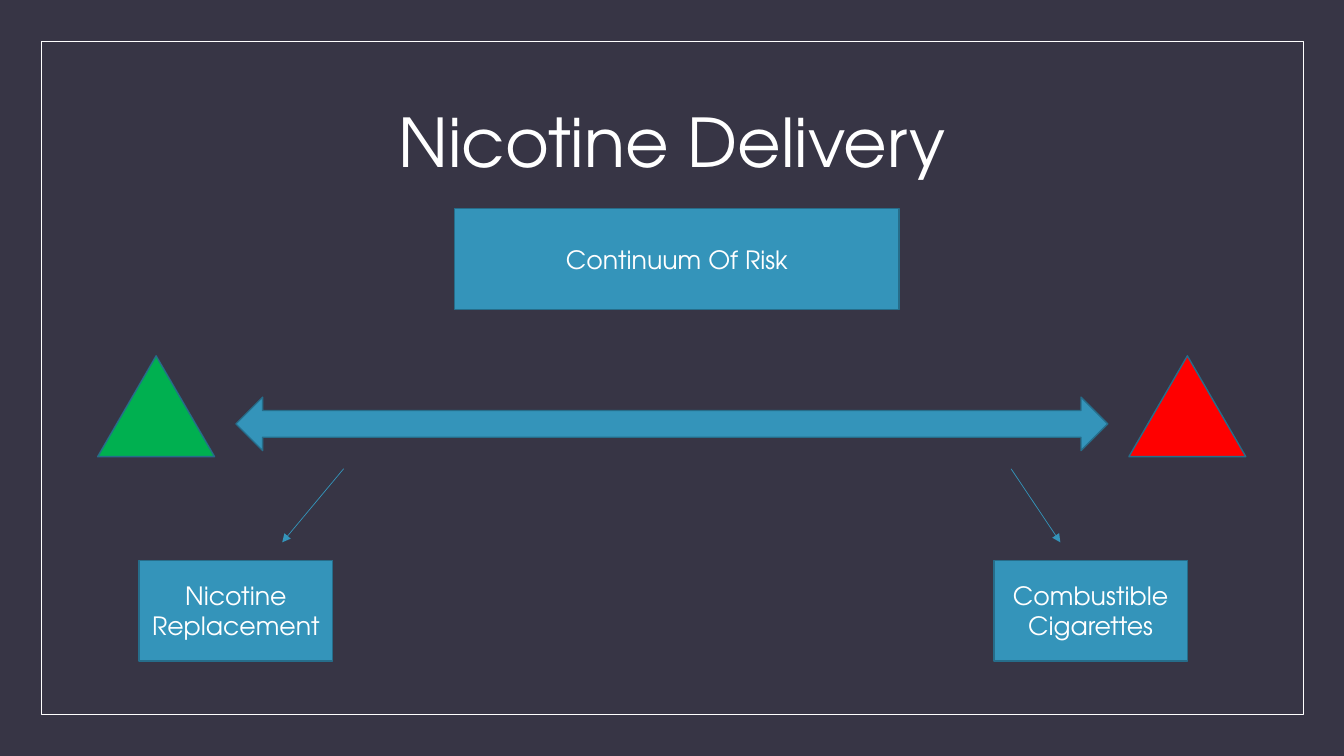
from lxml import etree
from pptx import Presentation
from pptx.dml.color import RGBColor
from pptx.enum import shapes, text
from pptx.oxml.ns import qn
from pptx.util import Pt

FONT = "TeX Gyre Adventor"
BACK, WHITE, BLUE, EDGE = "373545", "FFFFFF", "3494BA", "266D8A"
GREEN, RED = "00B050", "FF0000"

# Lengths in points: left, top, width, height
TITLE = ("Nicotine Delivery", (84.2, 50.4, 792, 108))
FRAME = (29.5, 29.5, 901.5, 481)
RISK_ARROW = (168.5, 283.7, 622.8, 38.2)

ROW_H = 72
TRIANGLE_TOP, TRIANGLE_W = 254.2, 83.5
TRIANGLES = [(69.8, GREEN), (806.4, RED)]
POINTER_TOP, POINTER_END = 334.8, 387.4
POINTERS = [(245.5, 201.6), (722.2, 757.4)]
BOXES = [
    ("Nicotine Replacement", 99.4, 400.3, 138.2),
    ("Combustible Cigarettes", 709.9, 400.3, 138.2),
    ("Continuum Of Risk", 324.7, 149, 317.5),
]


def rgb(value):
    return RGBColor.from_string(value)


def write(sp, words, size=18, color=WHITE, spacing=1.0):
    tf = sp.text_frame
    tf.word_wrap = True
    tf.auto_size = text.MSO_AUTO_SIZE.NONE
    tf.vertical_anchor = text.MSO_ANCHOR.MIDDLE
    p = tf.paragraphs[0]
    p.alignment = text.PP_ALIGN.CENTER
    p.line_spacing = spacing
    r = p.add_run()
    r.text = words
    r.font.name, r.font.size = FONT, Pt(size)
    r.font.color.rgb = rgb(color)


def add_shape(s, kind, box, fill=BLUE, line=EDGE, width=1):
    sp = s.shapes.add_shape(kind, *map(Pt, box))
    sp.shadow.inherit = False
    if fill:
        sp.fill.solid()
        sp.fill.fore_color.rgb = rgb(fill)
    else:
        sp.fill.background()
    sp.line.color.rgb = rgb(line)
    sp.line.width = Pt(width)
    return sp


def add_pointer(s, x1, y1, x2, y2):
    """Draw a thin line with an arrowhead at its second point."""
    line = s.shapes.add_connector(
        shapes.MSO_CONNECTOR.STRAIGHT, *map(Pt, (x1, y1, x2, y2)))
    line.line.color.rgb = rgb(BLUE)
    line.line.width = Pt(0.5)
    etree.SubElement(line.line._get_or_add_ln(), qn("a:tailEnd"), type="triangle")
    etree.SubElement(line._element.spPr, qn("a:effectLst"))


def main():
    prs = Presentation()
    prs.slide_width, prs.slide_height = Pt(960), Pt(540)
    s = prs.slides.add_slide(prs.slide_layouts[5])
    s.background.fill.solid()
    s.background.fill.fore_color.rgb = rgb(BACK)

    words, box = TITLE
    title = s.shapes.title
    title.left, title.top, title.width, title.height = map(Pt, box)
    write(title, words, size=48, spacing=0.9)

    kinds = shapes.MSO_SHAPE
    add_shape(s, kinds.RECTANGLE, FRAME, fill=None, line=WHITE, width=0.5)
    add_shape(s, kinds.LEFT_RIGHT_ARROW, RISK_ARROW)
    for left, color in TRIANGLES:
        add_shape(s, kinds.ISOSCELES_TRIANGLE,
                  (left, TRIANGLE_TOP, TRIANGLE_W, ROW_H), fill=color)
    for start, end in POINTERS:
        add_pointer(s, start, POINTER_TOP, end, POINTER_END)
    for words, left, top, width in BOXES:
        write(add_shape(s, kinds.RECTANGLE, (left, top, width, ROW_H)), words)

    prs.save("out.pptx")


if __name__ == "__main__":
    main()
